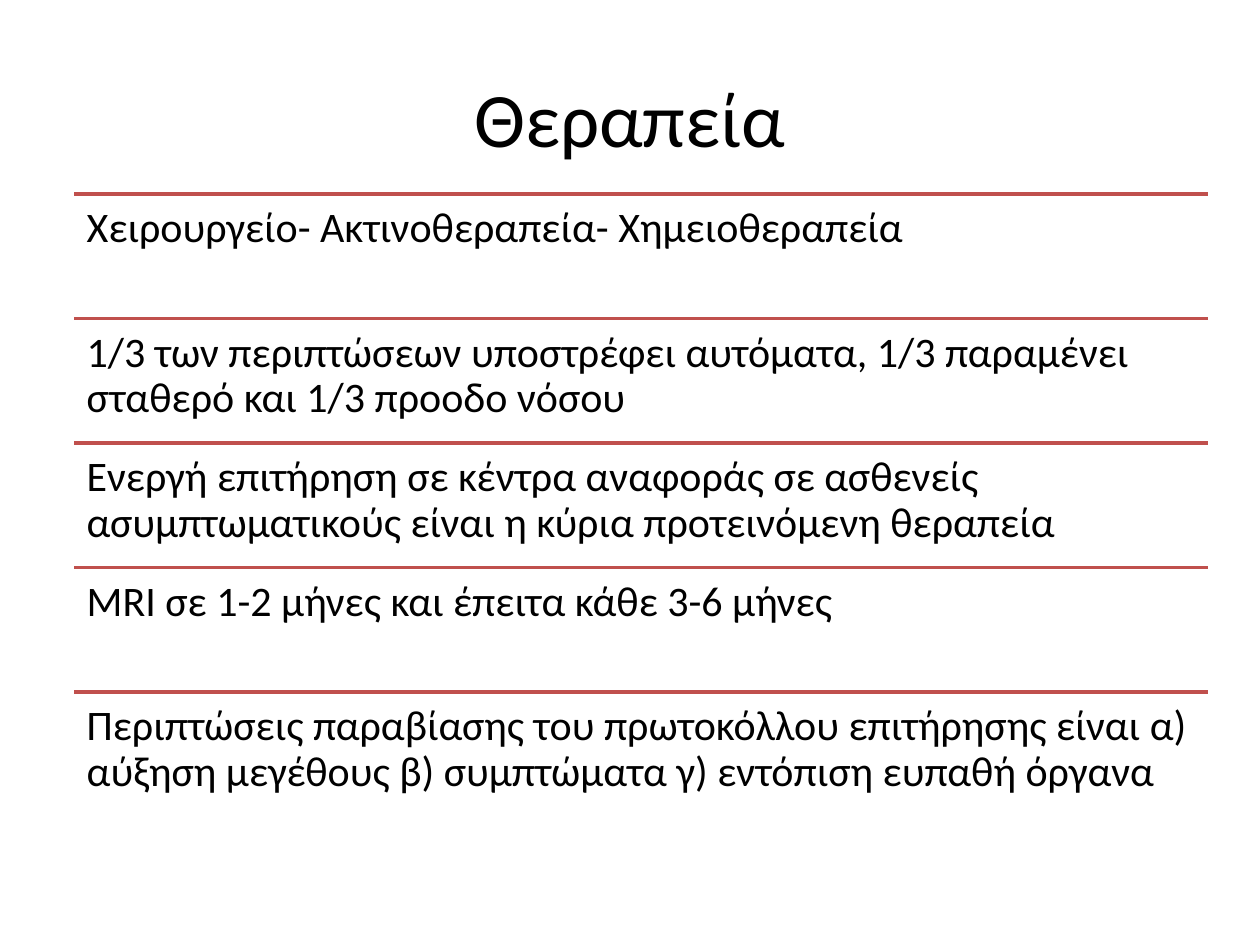
from lxml import etree
from pptx import Presentation
from pptx import util as u
from pptx.dml.color import RGBColor
from pptx.enum import shapes, text
from pptx.oxml.ns import qn

# Content
TITLE = "Θεραπεία"
POINTS = [
    "Χειρουργείο- Ακτινοθεραπεία- Χημειοθεραπεία",
    "1/3 των περιπτώσεων υποστρέφει αυτόματα, 1/3 παραμένει σταθερό και 1/3 προοδο νόσου",
    "Ενεργή επιτήρηση σε κέντρα αναφοράς σε ασθενείς ασυμπτωματικούς "
    "είναι η κύρια προτεινόμενη θεραπεία",
    "MRI σε 1-2 μήνες και έπειτα κάθε 3-6 μήνες",
    "Περιπτώσεις παραβίασης του πρωτοκόλλου επιτήρησης είναι α) αύξηση μεγέθους "
    "β) συμπτώματα γ) εντόπιση ευπαθή όργανα",
]

# Style and grid
BLACK = RGBColor(0x00, 0x00, 0x00)
RED = RGBColor(0xC0, 0x50, 0x4D)
FONT = "Calibri"
LIST_LEFT, LIST_TOP = u.Inches(0.59), u.Inches(1.54)
LIST_WIDTH, LIST_HEIGHT = u.Inches(9), u.Inches(4.94)
ROW_HEIGHT = LIST_HEIGHT // len(POINTS)


def add_text(slide, box, content, size, anchor, margin_y):
    """Add a wrapped one-paragraph text box and return its paragraph."""
    frame = slide.shapes.add_textbox(*box).text_frame
    frame.word_wrap = True
    frame.vertical_anchor = anchor
    frame.margin_left = frame.margin_right = u.Inches(0.1)
    frame.margin_top = frame.margin_bottom = u.Inches(margin_y)
    paragraph = frame.paragraphs[0]
    run = paragraph.add_run()
    run.text = content
    run.font.name = FONT
    run.font.size = u.Pt(size)
    run.font.color.rgb = BLACK
    return paragraph


def add_rule(slide, top):
    """Add a red line across the list at the given height."""
    rule = slide.shapes.add_connector(
        shapes.MSO_CONNECTOR.STRAIGHT, LIST_LEFT, top, LIST_LEFT + LIST_WIDTH, top)
    rule.line.color.rgb = RED
    rule.line.width = u.Pt(2)
    etree.SubElement(rule._element.spPr, qn("a:effectLst"))


def main():
    presentation = Presentation()
    presentation.slide_width, presentation.slide_height = u.Inches(10), u.Inches(7.5)
    slide = presentation.slides.add_slide(presentation.slide_layouts[6])

    # Title
    title_box = [u.Inches(value) for value in (0.5, 0.3, 9, 1.25)]
    title = add_text(slide, title_box, TITLE, 44, text.MSO_ANCHOR.MIDDLE, 0.05)
    title.alignment = text.PP_ALIGN.CENTER

    # Ruled list
    for row, point in enumerate(POINTS):
        top = LIST_TOP + row * ROW_HEIGHT
        add_rule(slide, top)
        box = (LIST_LEFT, top, LIST_WIDTH, ROW_HEIGHT)
        paragraph = add_text(slide, box, point, 24, text.MSO_ANCHOR.TOP, 0.1)
        paragraph.line_spacing = 0.9

    presentation.save("out.pptx")


if __name__ == "__main__":
    main()
